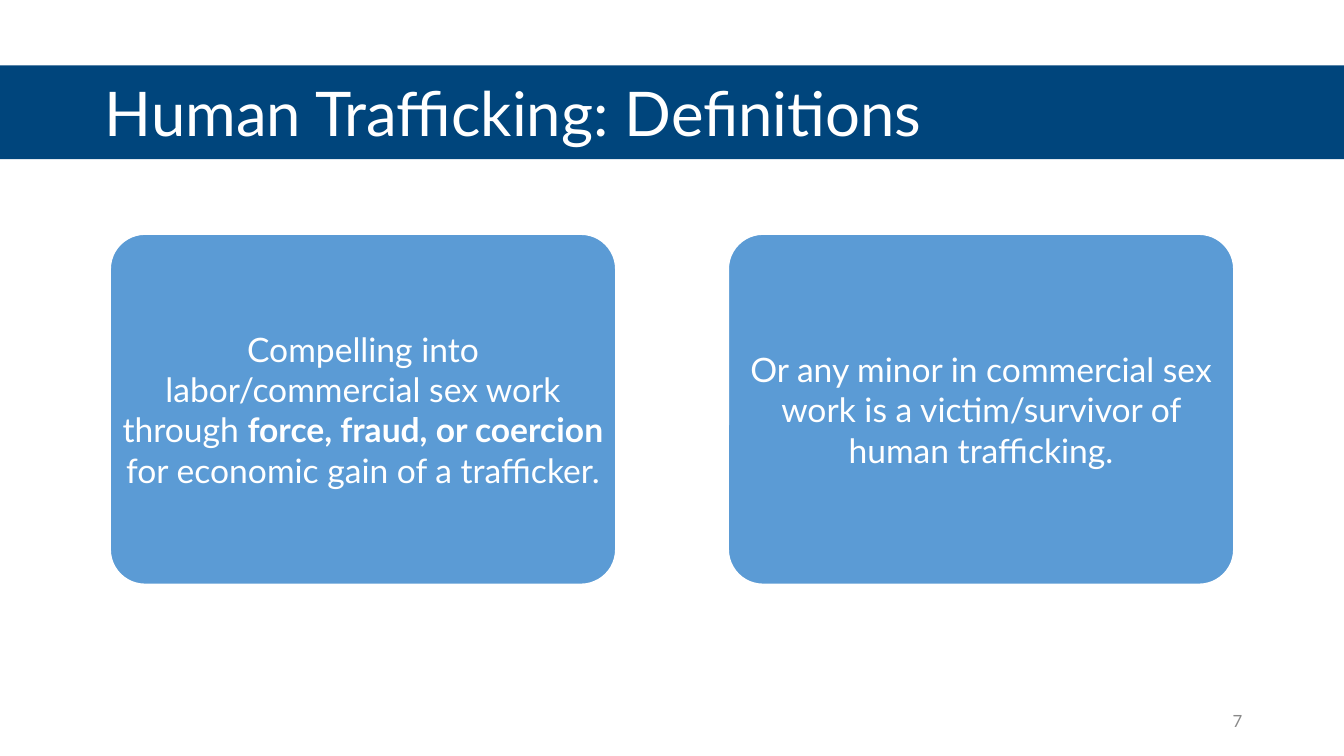
from dataclasses import dataclass
from typing import Optional

from pptx import Presentation
from pptx import util as u
from pptx.dml.color import RGBColor
from pptx.enum import shapes, text

NAVY = RGBColor(0x00, 0x45, 0x7C)
BLUE = RGBColor(0x5B, 0x9B, 0xD5)
WHITE = RGBColor(0xFF, 0xFF, 0xFF)
GRAY = RGBColor(0x89, 0x89, 0x89)
FONT = "Lato"
SLIDE_WIDTH, SLIDE_HEIGHT = 13.33, 7.5


@dataclass(frozen=True)
class Run:
    words: str
    bold: bool = False


@dataclass(frozen=True)
class Box:
    left: float
    top: float
    width: float
    height: float


@dataclass(frozen=True)
class TextStyle:
    size: int
    color: RGBColor
    alignment: text.PP_ALIGN
    line_spacing: float = 1.0
    margin: Optional[float] = None


TITLE = TextStyle(44, WHITE, text.PP_ALIGN.LEFT, line_spacing=0.9)
NUMBER = TextStyle(12, GRAY, text.PP_ALIGN.RIGHT)
CARD = TextStyle(24, WHITE, text.PP_ALIGN.CENTER, margin=0)

CARD_LEFT, CARD_PITCH = 1.09, 6.13
DEFINITIONS = [
    [
        Run("Compelling into labor/commercial sex work through "),
        Run("force, fraud, or coercion", bold=True),
        Run(" for economic gain of a trafficker."),
    ],
    [Run("Or any minor in commercial sex work is a victim/survivor of human trafficking.")],
]


def place(box: Box) -> list[u.Length]:
    return [u.Inches(value) for value in (box.left, box.top, box.width, box.height)]


def write(shape, runs: list[Run], style: TextStyle) -> None:
    frame = shape.text_frame
    frame.word_wrap = True
    frame.vertical_anchor = text.MSO_ANCHOR.MIDDLE
    if style.margin is not None:
        margin = u.Inches(style.margin)
        frame.margin_left = frame.margin_right = margin
        frame.margin_top = frame.margin_bottom = margin
    paragraph = frame.paragraphs[0]
    paragraph.alignment = style.alignment
    paragraph.line_spacing = style.line_spacing
    for item in runs:
        run = paragraph.add_run()
        run.text = item.words
        run.font.name = FONT
        run.font.size = u.Pt(style.size)
        run.font.bold = item.bold
        run.font.color.rgb = style.color


def add_text(slide, box: Box, words: str, style: TextStyle) -> None:
    write(slide.shapes.add_textbox(*place(box)), [Run(words)], style)


def add_filled(slide, kind: shapes.MSO_SHAPE, box: Box, color: RGBColor):
    shape = slide.shapes.add_shape(kind, *place(box))
    shape.shadow.inherit = False
    shape.fill.solid()
    shape.fill.fore_color.rgb = color
    shape.line.fill.background()
    return shape


def add_card(slide, box: Box, runs: list[Run]) -> None:
    card = add_filled(slide, shapes.MSO_SHAPE.ROUNDED_RECTANGLE, box, BLUE)
    card.adjustments[0] = 0.1
    card.line.color.rgb = WHITE
    card.line.width = u.Pt(1.5)
    write(card, runs, CARD)


def main() -> None:
    presentation = Presentation()
    presentation.slide_width = u.Inches(SLIDE_WIDTH)
    presentation.slide_height = u.Inches(SLIDE_HEIGHT)
    slide = presentation.slides.add_slide(presentation.slide_layouts[6])

    add_filled(slide, shapes.MSO_SHAPE.RECTANGLE, Box(0, 0.65, SLIDE_WIDTH, 0.93), NAVY)
    add_text(slide, Box(0.94, 0.48, 11.43, 1.35), "Human Trafficking: Definitions", TITLE)
    add_text(slide, Box(9.42, 6.95, 3, 0.4), "7", NUMBER)
    for index, runs in enumerate(DEFINITIONS):
        add_card(slide, Box(CARD_LEFT + index * CARD_PITCH, 2.32, 5.02, 3.48), runs)

    presentation.save("out.pptx")


if __name__ == "__main__":
    main()
